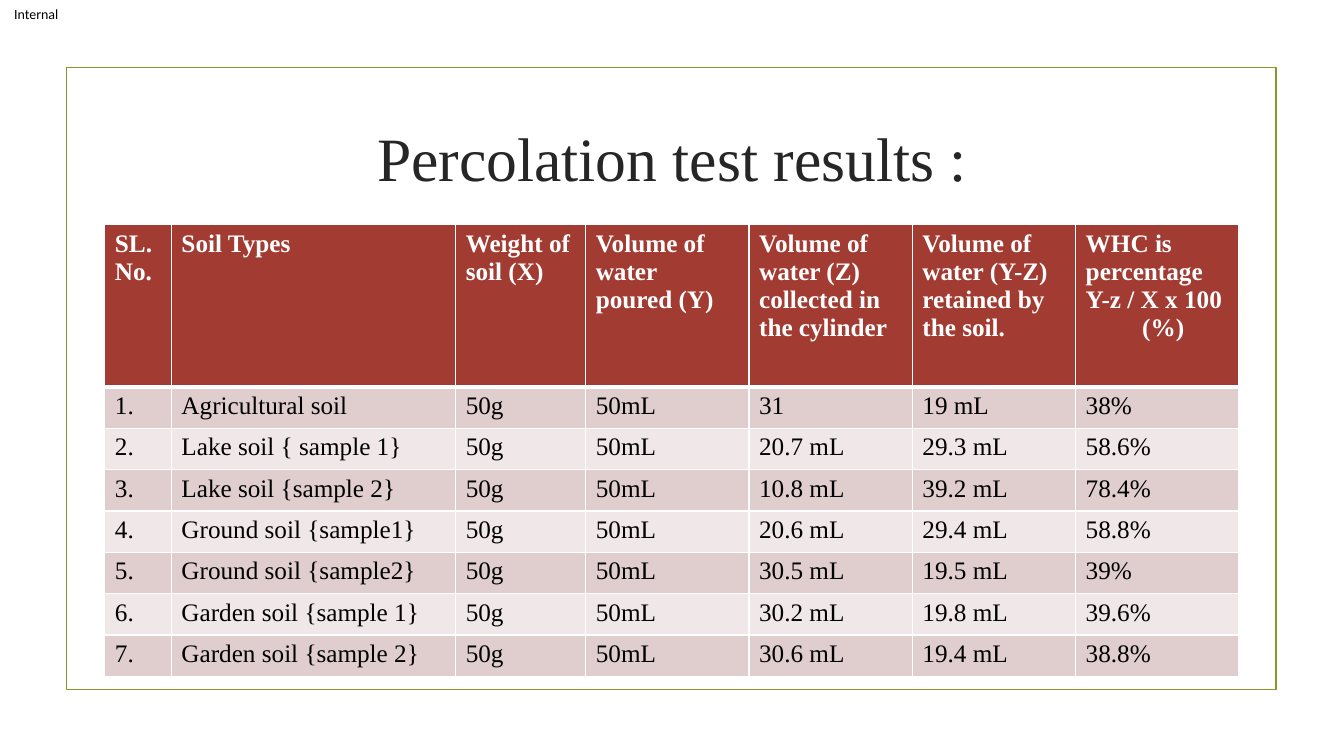
from dataclasses import dataclass

from lxml.etree import SubElement
from pptx import Presentation
from pptx.dml.color import RGBColor
from pptx.enum.shapes import MSO_SHAPE
from pptx.enum.text import MSO_ANCHOR, MSO_AUTO_SIZE, PP_ALIGN
from pptx.oxml.ns import qn
from pptx.util import Inches, Pt

SERIF = "Times New Roman"
GREEN, RED, WHITE, BLACK = "83992A", "A23C33", "FFFFFF", "000000"
TITLE_GRAY = "262626"
BANDS = ("E0CECE", "F0E8E8")


@dataclass
class SoilSample:
    name: str
    collected: str
    retained: str
    capacity: str


HEADERS = [
    "SL. No.",
    "Soil Types",
    "Weight of soil (X)",
    "Volume of water poured (Y)",
    "Volume of water (Z) collected in the cylinder",
    "Volume of water (Y-Z) retained by the soil.",
    "WHC is percentage\nY-z / X x 100\n(%)",
]
SAMPLES = [
    SoilSample("Agricultural soil", "31", "19 mL", "38%"),
    SoilSample("Lake soil { sample 1}", "20.7 mL", "29.3 mL", "58.6%"),
    SoilSample("Lake soil {sample 2}", "10.8 mL", "39.2 mL", "78.4%"),
    SoilSample("Ground soil {sample1}", "20.6 mL", "29.4 mL", "58.8%"),
    SoilSample("Ground soil {sample2}", "30.5 mL", "19.5 mL", "39%"),
    SoilSample("Garden soil {sample 1}", "30.2 mL", "19.8 mL", "39.6%"),
    SoilSample("Garden soil {sample 2}", "30.6 mL", "19.4 mL", "38.8%"),
]
COLUMN_WIDTHS = [0.66, 2.82, 1.29] + [1.62] * 4
HEADER_HEIGHT, ROW_HEIGHT = 1.61, 0.41


def color(value: str) -> RGBColor:
    return RGBColor.from_string(value)


def write_text(frame, text: str, *, size: float, font: str = SERIF,
               fill: str = BLACK, bold: bool = False, align=PP_ALIGN.LEFT) -> None:
    frame.text = text
    for paragraph in frame.paragraphs:
        paragraph.alignment = align
        for run in paragraph.runs:
            run.font.name = font
            run.font.size = Pt(size)
            run.font.bold = bold
            run.font.color.rgb = color(fill)


def set_borders(cell, *, top: float = 1, bottom: float = 1) -> None:
    properties = cell._tc.get_or_add_tcPr()
    widths = {"a:lnL": 1, "a:lnR": 1, "a:lnT": top, "a:lnB": bottom}
    for tag, width in widths.items():
        line = SubElement(properties, qn(tag), w=str(Pt(width)))
        fill = SubElement(line, qn("a:solidFill"))
        SubElement(fill, qn("a:srgbClr"), val=WHITE)


def fill_cell(cell, text: str, *, background: str, fill: str = BLACK,
              bold: bool = False, top: float = 1, bottom: float = 1) -> None:
    set_borders(cell, top=top, bottom=bottom)
    cell.fill.solid()
    cell.fill.fore_color.rgb = color(background)
    write_text(cell.text_frame, text, size=18, fill=fill, bold=bold)


def add_frame(slide) -> None:
    frame = slide.shapes.add_shape(
        MSO_SHAPE.RECTANGLE, Inches(0.66), Inches(0.67), Inches(12), Inches(6.17))
    frame.shadow.inherit = False
    frame.fill.background()
    frame.line.color.rgb = color(GREEN)
    frame.line.width = Pt(1.25)


def add_label(slide) -> None:
    label = slide.shapes.add_textbox(
        Inches(0.14), Inches(0), Inches(0.59), Inches(0.28))
    frame = label.text_frame
    frame.margin_left = frame.margin_right = Inches(0)
    frame.margin_top = frame.margin_bottom = Inches(0)
    frame.vertical_anchor = MSO_ANCHOR.MIDDLE
    frame.word_wrap = True
    write_text(frame, "Internal", size=10, font="Calibri")


def place_title(slide) -> None:
    title = slide.shapes.title
    title.left, title.top = Inches(1.42), Inches(1.07)
    title.width, title.height = Inches(10.5), Inches(0.97)
    frame = title.text_frame
    frame.auto_size = MSO_AUTO_SIZE.NONE
    frame.vertical_anchor = MSO_ANCHOR.MIDDLE
    write_text(frame, "Percolation test results :", size=44,
               fill=TITLE_GRAY, align=PP_ALIGN.CENTER)


def add_results_table(slide) -> None:
    height = HEADER_HEIGHT + ROW_HEIGHT * len(SAMPLES)
    table = slide.shapes.add_table(
        len(SAMPLES) + 1, len(HEADERS), Inches(1.04), Inches(2.23),
        Inches(sum(COLUMN_WIDTHS)), Inches(height)).table
    for column, width in zip(table.columns, COLUMN_WIDTHS):
        column.width = Inches(width)
    for row in table.rows:
        row.height = Inches(ROW_HEIGHT)
    table.rows[0].height = Inches(HEADER_HEIGHT)

    # Header row, with the unit indented under its formula
    for column, text in enumerate(HEADERS):
        fill_cell(table.cell(0, column), text, background=RED,
                  fill=WHITE, bold=True, bottom=3)
    unit = table.cell(0, len(HEADERS) - 1).text_frame.paragraphs[-1]
    unit._p.get_or_add_pPr().set("marL", str(Inches(0.56)))

    # Sample rows
    for number, sample in enumerate(SAMPLES, start=1):
        values = [f"{number}.", sample.name, "50g", "50mL",
                  sample.collected, sample.retained, sample.capacity]
        for column, text in enumerate(values):
            fill_cell(table.cell(number, column), text,
                      background=BANDS[(number - 1) % 2],
                      top=3 if number == 1 else 1)


def main() -> None:
    presentation = Presentation()
    presentation.slide_width = Inches(13.33)
    presentation.slide_height = Inches(7.5)
    slide = presentation.slides.add_slide(presentation.slide_layouts[5])
    add_frame(slide)
    add_label(slide)
    place_title(slide)
    add_results_table(slide)
    presentation.save("out.pptx")


if __name__ == "__main__":
    main()
